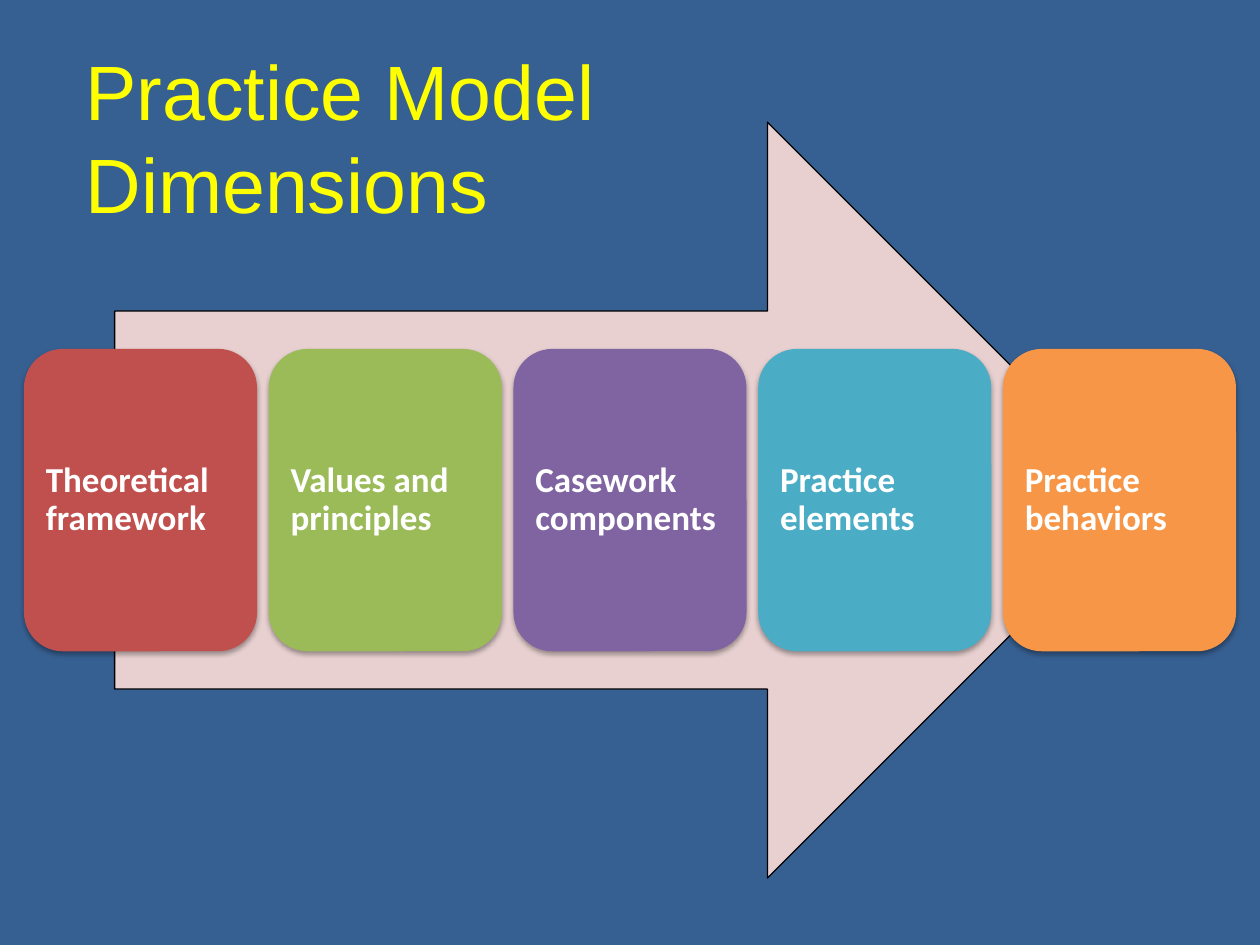
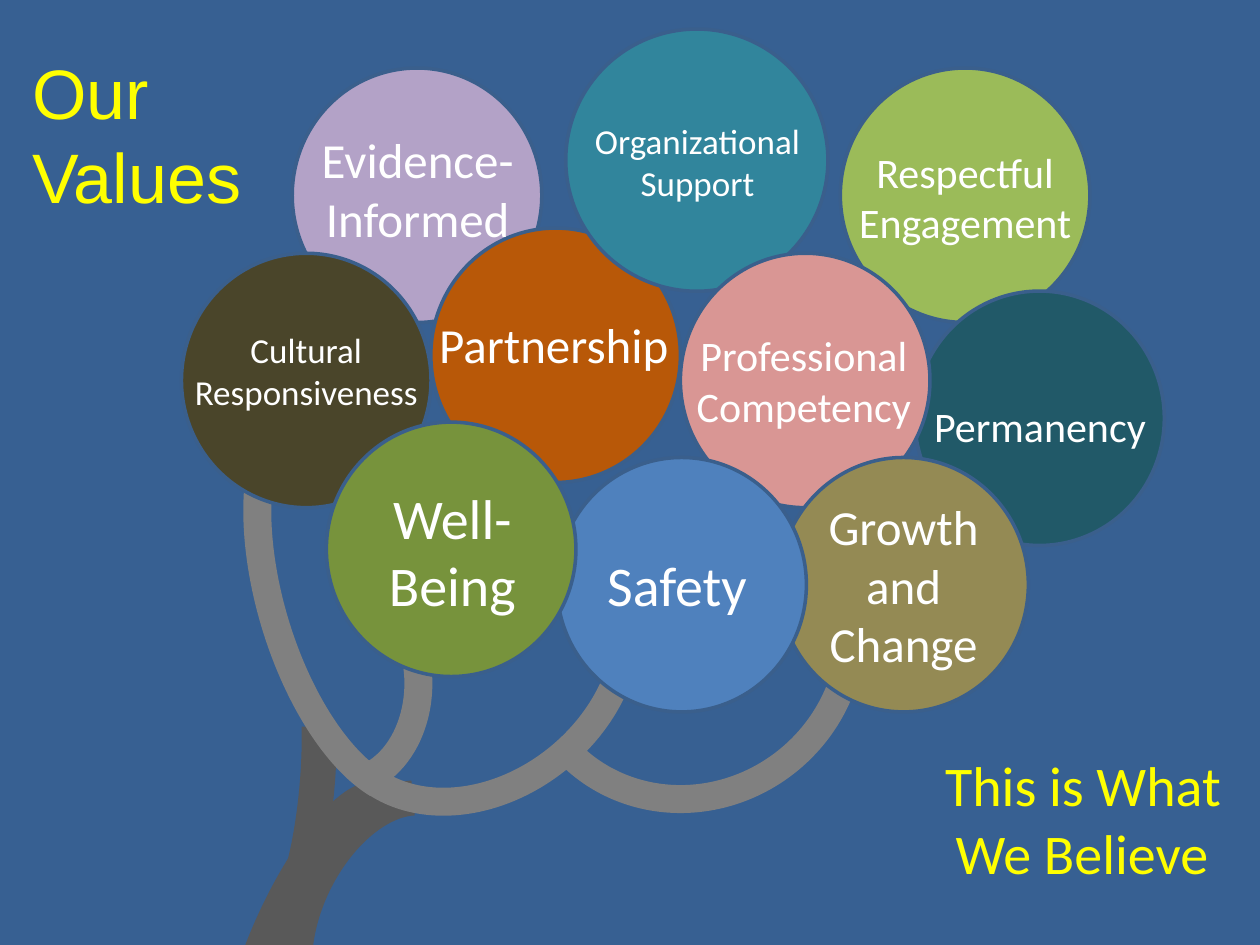
from pptx import Presentation
from pptx.dml.color import RGBColor as RGB
from pptx.enum.shapes import MSO_SHAPE as SHAPE
from pptx.enum.text import MSO_ANCHOR as ANCHOR, PP_ALIGN as ALIGN
from pptx.oxml import parse_xml
from pptx.oxml.ns import nsdecls
from pptx.util import Pt

SLIDE_W, SLIDE_H = 720, 540
NAVY = RGB(0x37, 0x60, 0x92)
RIM = RGB(0x3A, 0x5F, 0x8C)
YELLOW = RGB(0xFF, 0xFF, 0x00)
WHITE = RGB(0xFF, 0xFF, 0xFF)
BLACK = RGB(0x00, 0x00, 0x00)
PINK = RGB(0xE8, 0xD0, 0xD0)
RED = RGB(0xC0, 0x50, 0x4D)
GREEN = RGB(0x9B, 0xBB, 0x59)
PURPLE = RGB(0x80, 0x64, 0xA2)
AQUA = RGB(0x4B, 0xAC, 0xC6)
ORANGE = RGB(0xF7, 0x96, 0x46)
TRUNK = RGB(0x59, 0x59, 0x59)
BRANCH = RGB(0x80, 0x80, 0x80)
DEEP_TEAL = RGB(0x21, 0x59, 0x68)
LILAC = RGB(0xB3, 0xA2, 0xC7)
RUST = RGB(0xB8, 0x58, 0x08)
TEAL = RGB(0x31, 0x85, 0x9C)
ROSE = RGB(0xD9, 0x96, 0x94)
KHAKI = RGB(0x94, 0x8A, 0x54)
OLIVE = RGB(0x4A, 0x45, 0x2A)
BLUE = RGB(0x4F, 0x81, 0xBD)
MOSS = RGB(0x77, 0x93, 0x3C)

CARDS = [
    ("Theoretical framework", RED),
    ("Values and principles", GREEN),
    ("Casework components", PURPLE),
    ("Practice elements", AQUA),
    ("Practice behaviors", ORANGE),
]

ARCS = [
    ((175, 451.4, 87.8, 144.7), 205.9, (183.33, 46.96), TRUNK, 20),
    ((131, 353.5, 50.4, 185), 4.7, (183.33, 55.19), TRUNK, 20),
    ((157, 449.3, 46.1, 163.4), 205.9, (183.33, 55.19), TRUNK, 20),
    ((303.1, 269.3, 180.7, 190.1), 50.2, (191.55, 51.93), BRANCH, 16),
    ((154.8, 223.2, 107.3, 234.7), 163.3, (169.66, 45.42), BRANCH, 16),
    ((200.9, 283.7, 145.4, 185.8), 50.2, (191.55, 51.93), BRANCH, 16),
    ((154.1, 334.1, 85, 113), 0, (166.78, 46.45), BRANCH, 16),
]

CIRCLE = (142.6, 145.4)
BIG_CIRCLE = (149.8, 149.8)
VALUES = [
    ("Respectful Engagement", GREEN, (480.2, 38.9), CIRCLE, (480.2, 79.9, 142.6), 24),
    ("Permanency", DEEP_TEAL, (522.7, 166.3), CIRCLE, (516.2, 225.4, 156.2), 24),
    ("Evidence-Informed", LILAC, (167, 38.9), CIRCLE, (170.6, 70.6, 136.1), 28),
    ("Partnership", RUST, (246.2, 130.3), CIRCLE, (240.5, 176.4, 151.9), 28),
    ("Organizational Support", TEAL, (323.3, 16.6), BIG_CIRCLE, (319.7, 64.8, 157.7), 20),
    ("Professional Competency", ROSE, (388.8, 144.7), CIRCLE, (389.5, 185, 139.7), 24),
    ("Growth and Change", KHAKI, (445, 261.4), CIRCLE, (455.8, 280.1, 121), 28),
    ("Cultural Responsiveness", OLIVE, (103.7, 144.7), CIRCLE, (100.1, 184.3, 149.8), 20),
    ("Safety", BLUE, (318.2, 261.4), CIRCLE, (338.4, 311, 97), 32),
    ("Well-Being", MOSS, (186.5, 241.2), CIRCLE, (208.8, 272.9, 99.4), 32),
]


class Deck:
    body_font = "Calibri"
    title_font = "Arial"

    def __init__(self):
        self.prs = Presentation()
        self.prs.slide_width, self.prs.slide_height = Pt(SLIDE_W), Pt(SLIDE_H)
        self.s = None

    def slide(self):
        self.s = self.prs.slides.add_slide(self.prs.slide_layouts[6])
        fill = self.s.background.fill
        fill.solid()
        fill.fore_color.rgb = NAVY

    def put_text(self, sp, text, size, color=WHITE, font=body_font, bold=False,
                 align=ALIGN.LEFT, anchor=ANCHOR.TOP, spacing=None):
        tf = sp.text_frame
        tf.word_wrap = True
        tf.vertical_anchor = anchor
        p = tf.paragraphs[0]
        p.text = text
        p.alignment = align
        p.line_spacing = spacing
        for r in p.runs:
            for name, value in {"name": font, "size": Pt(size), "bold": bold}.items():
                setattr(r.font, name, value)
            r.font.color.rgb = color

    def text(self, box, text, size, **style):
        sp = self.s.shapes.add_textbox(*map(Pt, box))
        self.put_text(sp, text, size, **style)

    def title(self, box, text, size, anchor=ANCHOR.TOP):
        self.text(box, text, size, color=YELLOW, font=self.title_font, anchor=anchor)

    def shape(self, kind, box, fill=None, line=None, width=1):
        sp = self.s.shapes.add_shape(kind, *map(Pt, box))
        sp.shadow.inherit = False
        if fill is None:
            sp.fill.background()
        else:
            sp.fill.solid()
            sp.fill.fore_color.rgb = fill
        if line is None:
            sp.line.fill.background()
        else:
            sp.line.color.rgb = line
            sp.line.width = Pt(width)
        return sp

    def card(self, box, text, fill):
        sp = self.shape(SHAPE.ROUNDED_RECTANGLE, box, fill)
        effects = sp.element.spPr.find("{*}effectLst")
        effects.append(parse_xml(
            f'<a:outerShdw {nsdecls("a")} blurRad="{int(Pt(3.1))}" dist="{int(Pt(1.8))}" '
            'dir="5400000" rotWithShape="0"><a:srgbClr val="000000">'
            '<a:alpha val="35000"/></a:srgbClr></a:outerShdw>'))
        for side in ("left", "right", "top", "bottom"):
            setattr(sp.text_frame, f"margin_{side}", Pt(6))
        self.put_text(sp, text, 20, bold=True, anchor=ANCHOR.MIDDLE, spacing=0.9)

    def arc(self, box, rotation, angles, color, width):
        sp = self.shape(SHAPE.ARC, box, line=color, width=width)
        sp.rotation = rotation
        for i, angle in enumerate(angles):
            sp.adjustments[i] = angle


def dimensions_slide(deck):
    deck.slide()
    deck.title((41.8, 11.5, 588.2, 132.5), "Practice Model \vDimensions", 44, ANCHOR.MIDDLE)
    middle = 285.8
    arrow_w, arrow_h = 589, 432
    deck.shape(SHAPE.RIGHT_ARROW,
               ((SLIDE_W - arrow_w) / 2, middle - arrow_h / 2, arrow_w, arrow_h),
               PINK, BLACK, 0.75)
    card_w, card_h, gap = 133.2, 172.8, 6.66
    pitch = card_w + gap
    left = (SLIDE_W - len(CARDS) * pitch + gap) / 2
    for i, (text, fill) in enumerate(CARDS):
        deck.card((left + i * pitch, middle - card_h / 2, card_w, card_h), text, fill)


def values_slide(deck):
    deck.slide()
    for arc in ARCS:
        deck.arc(*arc)
    for _, fill, corner, size, _, _ in VALUES:
        deck.shape(SHAPE.OVAL, corner + size, fill, RIM, 2)
    for text, _, _, _, label, size in VALUES:
        lines = len(text.replace("-", " ").split())
        deck.text((*label, lines * size * 1.2 + 7.2), text, size, align=ALIGN.CENTER)
    deck.text((524.9, 425.5, 180, 85), "This is What We Believe ", 32,
              color=YELLOW, align=ALIGN.RIGHT)
    deck.title((11.5, 24.5, 144.7, 104.4), "Our Values", 40)


def main():
    deck = Deck()
    dimensions_slide(deck)
    values_slide(deck)
    deck.prs.save("out.pptx")


if __name__ == "__main__":
    main()
